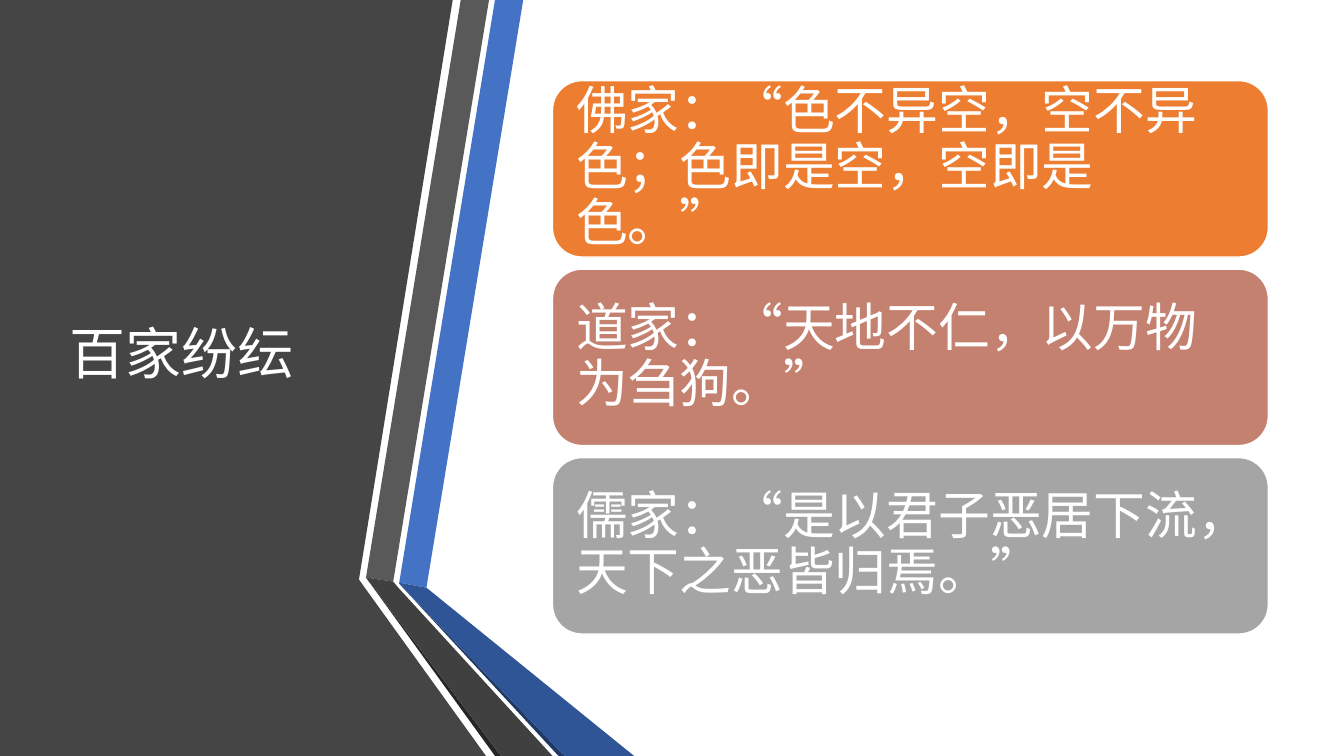
from dataclasses import dataclass

from pptx import Presentation
from pptx.dml.color import RGBColor
from pptx.enum.shapes import MSO_SHAPE
from pptx.enum.text import MSO_ANCHOR, MSO_AUTO_SIZE, PP_ALIGN
from pptx.slide import Slide
from pptx.text.text import TextFrame
from pptx.util import Inches, Pt

WHITE = RGBColor(0xFF, 0xFF, 0xFF)
PANEL_GREY = RGBColor(0x45, 0x45, 0x45)
BLUE = RGBColor(0x44, 0x72, 0xC4)
BLUE_FOLD = RGBColor(0x2F, 0x55, 0x97)
BLUE_SHADE = RGBColor(0x20, 0x38, 0x64)
GREY = RGBColor(0x59, 0x59, 0x59)
GREY_FOLD = RGBColor(0x40, 0x40, 0x40)
GREY_SHADE = RGBColor(0x26, 0x26, 0x26)
ORANGE = RGBColor(0xED, 0x7D, 0x31)
TERRACOTTA = RGBColor(0xC4, 0x81, 0x70)
SILVER = RGBColor(0xA5, 0xA5, 0xA5)

FONT_NAME = "Calibri"
CARD_LEFT, CARD_TOP = 5.48, 0.8
CARD_WIDTH, CARD_HEIGHT = 7.1, 1.75
CARD_PITCH = 1.87
CARD_INSET = Inches(0.15)


@dataclass(frozen=True)
class Ribbon:
    color: RGBColor
    points: tuple[tuple[float, float], ...]


@dataclass(frozen=True)
class Card:
    color: RGBColor
    quotation: str


RIBBONS = (
    Ribbon(PANEL_GREY, ((0, 0), (4.49, 0), (3.56, 5.75), (4.82, 7.5), (0, 7.5))),
    Ribbon(BLUE, ((3.96, 5.78), (4.23, 5.83), (5.19, 0), (4.91, 0))),
    Ribbon(GREY, ((4.85, 0), (4.57, 0), (3.63, 5.73), (3.9, 5.77))),
    Ribbon(GREY_SHADE, ((3.63, 5.73), (4.91, 7.5), (4.97, 7.5))),
    Ribbon(BLUE_SHADE, ((3.96, 5.79), (5.54, 7.5), (5.6, 7.5))),
    Ribbon(BLUE_FOLD, ((3.96, 5.78), (3.96, 5.79), (5.6, 7.5), (6.29, 7.5), (4.23, 5.83))),
    Ribbon(GREY_FOLD, ((5.48, 7.5), (3.95, 5.83), (3.9, 5.77), (3.63, 5.73), (4.97, 7.5))),
)

CARDS = (
    Card(ORANGE, "佛家：“色不异空，空不异色；色即是空，空即是色。”"),
    Card(TERRACOTTA, "道家：“天地不仁，以万物为刍狗。”"),
    Card(SILVER, "儒家：“是以君子恶居下流，天下之恶皆归焉。”"),
)


def write_text(text_frame: TextFrame, text: str, size: int) -> None:
    text_frame.text = text
    text_frame.word_wrap = True
    text_frame.auto_size = MSO_AUTO_SIZE.NONE
    text_frame.vertical_anchor = MSO_ANCHOR.MIDDLE
    paragraph = text_frame.paragraphs[0]
    paragraph.alignment = PP_ALIGN.LEFT
    paragraph.line_spacing = 0.9
    font = paragraph.runs[0].font
    font.name = FONT_NAME
    font.size = Pt(size)
    font.color.rgb = WHITE


def draw_ribbon(slide: Slide, ribbon: Ribbon) -> None:
    start, *others = [(Inches(x), Inches(y)) for x, y in ribbon.points]
    builder = slide.shapes.build_freeform(*start)
    builder.add_line_segments(others, close=True)
    shape = builder.convert_to_shape()
    shape.shadow.inherit = False
    shape.fill.solid()
    shape.fill.fore_color.rgb = ribbon.color
    shape.line.fill.background()


def draw_card(slide: Slide, card: Card, top: float) -> None:
    shape = slide.shapes.add_shape(
        MSO_SHAPE.ROUNDED_RECTANGLE,
        Inches(CARD_LEFT), Inches(top), Inches(CARD_WIDTH), Inches(CARD_HEIGHT),
    )
    shape.shadow.inherit = False
    shape.fill.solid()
    shape.fill.fore_color.rgb = card.color
    shape.line.color.rgb = WHITE
    shape.line.width = Pt(1)
    text_frame = shape.text_frame
    text_frame.margin_left = text_frame.margin_right = CARD_INSET
    text_frame.margin_top = text_frame.margin_bottom = CARD_INSET
    write_text(text_frame, card.quotation, 37)


def place_title(slide: Slide, text: str) -> None:
    """Format the title and bring it in front of the dark panel."""
    title = slide.shapes.title
    title.left, title.top = Inches(0.59), Inches(0.75)
    title.width, title.height = Inches(3.04), Inches(5.58)
    write_text(title.text_frame, text, 40)
    slide.shapes.element.append(title.element)


def main() -> None:
    presentation = Presentation()
    presentation.slide_width = Inches(13.33)
    presentation.slide_height = Inches(7.5)
    slide = presentation.slides.add_slide(presentation.slide_layouts[5])
    for ribbon in RIBBONS:
        draw_ribbon(slide, ribbon)
    place_title(slide, "百家纷纭")
    for index, card in enumerate(CARDS):
        draw_card(slide, card, CARD_TOP + index * CARD_PITCH)
    presentation.save("out.pptx")


if __name__ == "__main__":
    main()
